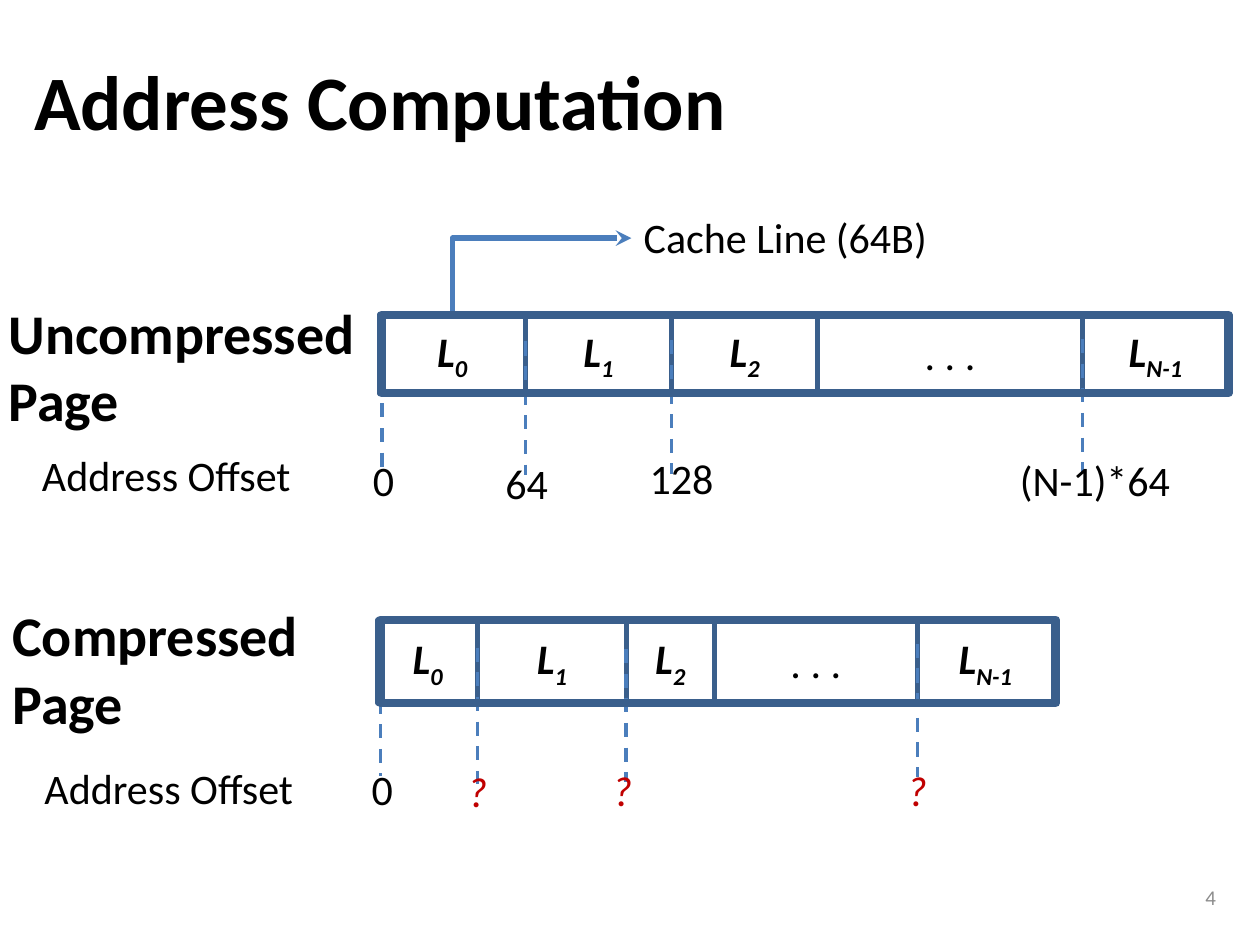
from dataclasses import dataclass
from itertools import accumulate

from lxml import etree
from pptx import Presentation
from pptx import util as u
from pptx.dml.color import RGBColor
from pptx.enum import dml, shapes, text
from pptx.oxml.ns import qn


@dataclass(frozen=True)
class Theme:
    """Colours, font and type sizes of the deck."""
    font: str = "Calibri"
    ink: str = "000000"
    border: str = "3A5F8C"
    accent: str = "4B7EBC"
    unknown: str = "C00000"
    muted: str = "8C8C8C"
    title: int = 44
    heading: int = 32
    body: int = 24
    small: int = 12


@dataclass(frozen=True)
class Mark:
    """An address below the left edge of one cell of a bar."""
    cell: int
    label: str
    width: float
    shift: float
    drop: float
    dash_top: float
    dash_end: float


THEME = Theme()
WIDTH, HEIGHT = u.Inches(10), u.Inches(7.5)
COLUMNS, ROWS = 100, 75
LINE_NAMES = ("0", "1", "2", None, "N-1")


def across(columns):
    """Turn grid columns into a length."""
    return round(WIDTH * columns / COLUMNS)


def down(rows):
    """Turn grid rows into a length."""
    return round(HEIGHT * rows / ROWS)


def place(box):
    """Turn a grid box into left, top, width and height."""
    left, top, width, height = box
    return across(left), down(top), across(width), down(height)


def style(span, size=THEME.body, color=THEME.ink, bold=None, italic=None):
    """Format one run."""
    span.font.name, span.font.size = THEME.font, u.Pt(size)
    span.font.color.rgb = RGBColor.from_string(color)
    span.font.bold, span.font.italic = bold, italic


def add_label(slide, box, words, align=text.PP_ALIGN.LEFT, **look):
    """Add a wrapping line of text in a box."""
    label = slide.shapes.add_textbox(*place(box))
    frame = label.text_frame
    frame.word_wrap = True
    frame.text = words
    para = frame.paragraphs[0]
    para.alignment = align
    style(para.runs[0], **look)
    return label


def add_rectangle(slide, box, weight):
    """Add an unfilled bordered rectangle."""
    shape = slide.shapes.add_shape(shapes.MSO_SHAPE.RECTANGLE, *place(box))
    shape.shadow.inherit = False
    shape.fill.background()
    shape.line.color.rgb = RGBColor.from_string(THEME.border)
    shape.line.width = u.Pt(weight)
    return shape


def add_cell(slide, box, name):
    """Add one cache line, or the ellipsis when it has no name."""
    cell = add_rectangle(slide, box, 3)
    frame = cell.text_frame
    frame.vertical_anchor = text.MSO_ANCHOR.MIDDLE
    para = frame.paragraphs[0]
    para.alignment = text.PP_ALIGN.CENTER
    if name is None:
        para.text = ". . ."
        style(para.runs[0])
        return
    for words in ("L", name):
        span = para.add_run()
        span.text = words
        style(span, bold=True, italic=True)
    span.font._element.set("baseline", "-25000")


def add_line(slide, start, end, weight, kind=shapes.MSO_CONNECTOR.STRAIGHT):
    """Add an accent connector between two grid points."""
    line = slide.shapes.add_connector(
        kind, across(start[0]), down(start[1]), across(end[0]), down(end[1]))
    line.line.color.rgb = RGBColor.from_string(THEME.accent)
    line.line.width = u.Pt(weight)
    etree.SubElement(line._element.spPr, qn("a:effectLst"))
    return line


def add_callout(slide, start, run, rise, words):
    """Add an arrow going up, then right, to a caption."""
    middle, centre = start[0] + run / 2, start[1] - rise / 2
    arrow = add_line(slide, (middle + rise / 2, centre + run / 2),
                     (middle - rise / 2, centre - run / 2), 3,
                     shapes.MSO_CONNECTOR.ELBOW)
    properties = arrow._element.spPr
    properties.find(qn("a:prstGeom")).set("prst", "bentConnector2")
    properties.find(qn("a:xfrm")).set("rot", "5400000")
    etree.SubElement(arrow.line._get_or_add_ln(), qn("a:tailEnd"), type="stealth")
    add_label(slide, (start[0] + run, start[1] - rise - 2.6, 25.1, 5), words)


def add_page(slide, box, widths, marks, heading, heading_box, caption_box):
    """Draw a memory page as a bar of cache lines with addresses below."""
    left, top, width, height = box
    edges = list(accumulate(widths, initial=left - 0.2))
    for edge, span, name in zip(edges, widths, LINE_NAMES):
        add_cell(slide, (edge, top, span, height), name)
    for mark in marks:
        edge = left if mark.cell == 0 else edges[mark.cell]
        dash = add_line(slide, (edge, top + mark.dash_top),
                        (edge, top + mark.dash_end), 2)
        dash.line.dash_style = dml.MSO_LINE.DASH
        known = mark.label != "?"
        add_label(slide, (edge + mark.shift - mark.width / 2, top + mark.drop,
                          mark.width, 5), mark.label, text.PP_ALIGN.CENTER,
                  color=THEME.ink if known else THEME.unknown,
                  italic=None if known else True)
    add_rectangle(slide, box, 5)
    for words, (dx, dy, wide, tall), align, look in (
            (heading, heading_box, text.PP_ALIGN.LEFT,
             {"size": THEME.heading, "bold": True}),
            ("Address Offset", caption_box, text.PP_ALIGN.CENTER, {})):
        add_label(slide, (left + dx, top + dy, wide, tall), words, align, **look)


def add_title(slide, box, words):
    """Fill and place the title placeholder."""
    title = slide.shapes.title
    title.left, title.top, title.width, title.height = place(box)
    frame = title.text_frame
    frame.text = words
    frame.vertical_anchor = text.MSO_ANCHOR.MIDDLE
    para = frame.paragraphs[0]
    para.alignment = text.PP_ALIGN.LEFT
    style(para.runs[0], THEME.title, bold=True)


def main():
    """Build and save the deck."""
    deck = Presentation()
    deck.slide_width, deck.slide_height = WIDTH, HEIGHT
    slide = deck.slides.add_slide(deck.slide_layouts[5])
    add_title(slide, (1.7, 1.7, 90, 12.5), "Address Computation")
    add_callout(slide, (35.9, 25), 14.2, 6.1, "Cache Line (64B)")
    add_page(slide, (30.3, 25, 67.2, 6.2), (11.6, 11.6, 11.6, 21, 11.6),
             (Mark(0, "0", 7.3, 0.15, 10.6, 3.1, 12.1),
              Mark(1, "64", 8.4, 0.1, 10.8, 2.1, 12.7),
              Mark(2, "128", 11.6, 0.8, 10.4, 2, 12.6),
              Mark(4, "(N-1)*64", 24.2, 1, 10.6, 1.9, 12.5)),
             "Uncompressed Page", (-30.6, -1.8, 34.2, 11.8),
             (-30.6, 10.2, 27, 5))
    add_page(slide, (30.2, 49.2, 53.6, 6.6), (7.9, 11.8, 7, 16.1, 10.8),
             (Mark(0, "0", 7.3, 0.15, 10.9, 2.4, 12.4),
              Mark(1, "?", 6.6, 0, 11.1, 2.2, 13),
              Mark(2, "?", 6.6, -0.3, 11, 2.3, 12.9),
              Mark(4, "?", 6.6, 0, 11, 1.9, 12.5)),
             "Compressed Page", (-30.2, -2, 30, 11.8),
             (-30.2, 10.8, 26.8, 5))
    number = add_label(slide, (74.2, 69.2, 23.3, 4), "4", text.PP_ALIGN.RIGHT,
                       size=THEME.small, color=THEME.muted)
    number.text_frame.vertical_anchor = text.MSO_ANCHOR.MIDDLE
    deck.save("out.pptx")


if __name__ == "__main__":
    main()
